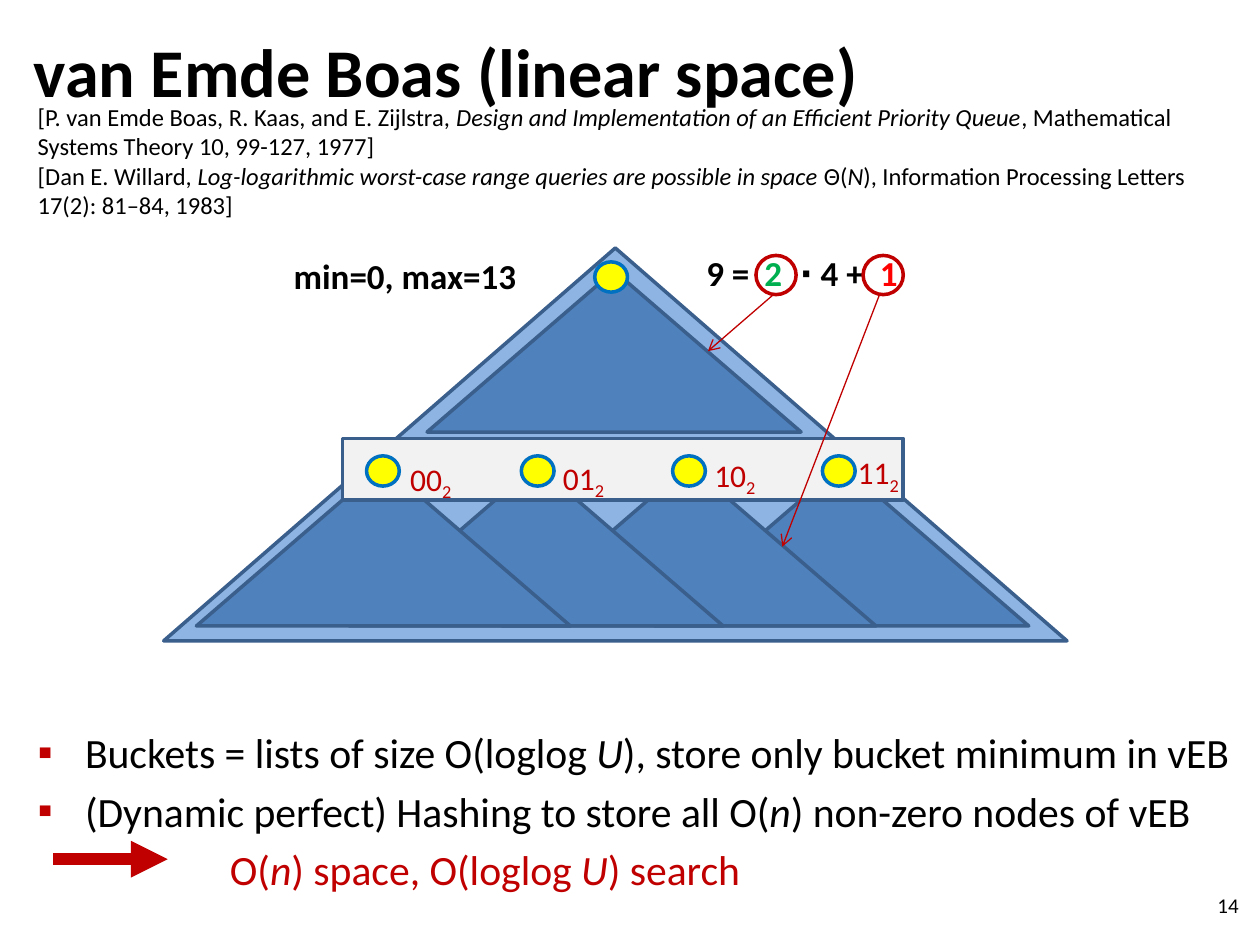
from lxml.etree import SubElement
from pptx import Presentation
from pptx.dml.color import RGBColor
from pptx.enum.shapes import MSO_CONNECTOR, MSO_SHAPE
from pptx.enum.text import MSO_ANCHOR, PP_ALIGN
from pptx.oxml.ns import qn
from pptx.util import Cm, Pt

FONT = "Calibri"
HUES = {
    "black": "000000", "red": "C00000", "bright": "FF0000", "green": "00B050",
    "pale": "8EB4E3", "blue": "4F81BD", "edge": "3A5F8C", "grey": "F2F2F2",
    "gold": "FFFF00", "rim": "0070C0",
}
ITAL = {"italic": True}


def hue(name):
    return RGBColor.from_string(HUES[name])


def write(frame, paras, size=14, bold=False, color="black", align=PP_ALIGN.LEFT,
          anchor=MSO_ANCHOR.TOP):
    """Fill a frame; each paragraph is a list of strings or (string, format) pairs."""
    frame.word_wrap = True
    frame.vertical_anchor = anchor
    for i, runs in enumerate(paras):
        para = frame.add_paragraph() if i else frame.paragraphs[0]
        para.alignment = align
        for item in runs:
            text, form = (item, {}) if isinstance(item, str) else item
            run = para.add_run()
            run.text = text
            font = run.font
            font.name, font.size, font.bold = FONT, Pt(size), bold
            font.italic = form.get("italic", False)
            font.color.rgb = hue(form.get("color", color))
            if "base" in form:
                run._r.get_or_add_rPr().set("baseline", str(form["base"] * 1000))
    return frame


def place(shape, x, y, w, h):
    shape.left, shape.top, shape.width, shape.height = Cm(x), Cm(y), Cm(w), Cm(h)


def label(slide, x, y, w, h, paras, **form):
    box = slide.shapes.add_textbox(Cm(x), Cm(y), Cm(w), Cm(h))
    return write(box.text_frame, paras, **form)


def draw(slide, kind, x, y, w, h, fill=None, line="edge"):
    shape = slide.shapes.add_shape(kind, Cm(x), Cm(y), Cm(w), Cm(h))
    shape.shadow.inherit = False
    if fill:
        shape.fill.solid()
        shape.fill.fore_color.rgb = hue(fill)
    else:
        shape.fill.background()
    shape.line.color.rgb = hue(line)
    shape.line.width = Pt(2)


def arrow(slide, x1, y1, x2, y2, width, head):
    line = slide.shapes.add_connector(
        MSO_CONNECTOR.STRAIGHT, Cm(x1), Cm(y1), Cm(x2), Cm(y2))
    line.line.color.rgb = hue("red")
    line.line.width = Pt(width)
    SubElement(line.line._get_or_add_ln(), qn("a:tailEnd"), type=head)
    SubElement(line._element.spPr, qn("a:effectLst"))


def indent(para, left, hang=0, mark=None):
    props = para._p.get_or_add_pPr()
    props.set("marL", str(Cm(left)))
    props.set("indent", str(-Cm(hang)))
    if mark:
        tint = SubElement(props, qn("a:buClr"))
        SubElement(tint, qn("a:srgbClr"), val=HUES["red"])
        SubElement(props, qn("a:buFont"), typeface="Wingdings")
        props[-1].set("typeface", FONT)
        SubElement(props, qn("a:buChar"), char=mark)
    else:
        SubElement(props, qn("a:buNone"))


def header(slide, x, y):
    title = slide.shapes.title
    place(title, x, y, 22.86, 2.16)
    write(title.text_frame, [["van Emde Boas (linear space)"]], size=39, bold=True,
          anchor=MSO_ANCHOR.MIDDLE)
    label(slide, x + 0.08, y + 1.6, 24.89, 3.99, [
        ["[P. van Emde Boas, R. Kaas, and E. Zijlstra, ",
         ("Design and Implementation of an Efficient Priority Queue", ITAL),
         ", Mathematical Systems Theory 10, 99-127, 1977]"],
        ["[Dan E. Willard, ",
         ("Log-logarithmic worst-case range queries are possible in space ", ITAL),
         "Θ(", ("N", ITAL),
         "), Information Processing Letters 17(2): 81–84, 1983]"],
    ])


def tree(slide, x, y):
    # Outer tree, top tree and bottom trees
    peak, disc = MSO_SHAPE.ISOSCELES_TRIANGLE, MSO_SHAPE.OVAL
    draw(slide, peak, x, y + 0.05, 18.21, 7.92, "pale")
    label(slide, x + 0.81, y + 0.05, 6.55, 1.12, [["min=0, max=13"]],
          size=20, bold=True, align=PP_ALIGN.RIGHT)
    spots = [(5.31, 0.51)] + [(0.66 + 3.08 * i, 4.42) for i in reversed(range(4))]
    for dx, dy in spots:
        draw(slide, peak, x + dx, y + dy, 7.54, 3.25, "blue")

    # Row of nodes with binary labels
    draw(slide, MSO_SHAPE.RECTANGLE, x + 3.61, y + 3.89, 11.3, 1.24, "grey")
    for dx, dy in [(4.09, 4.24), (7.21, 4.24), (10.26, 4.24), (13.28, 4.24),
                   (8.69, 0.33)]:
        draw(slide, disc, x + dx, y + dy, 0.66, 0.61, "gold", "rim")
    tags = [("00", 4.72, 4.19), ("01", 7.8, 4.17), ("10", 10.85, 4.11),
            ("11", 13.74, 4.06)]
    for bits, dx, dy in tags:
        label(slide, x + dx, y + dy, 2.4, 0.79, [[bits, ("2", {"base": -25})]],
              size=18, color="red")

    # Split of the key, with rings and arrows
    sum_text = label(slide, x + 10.69, y, 5.18, 1.12, [
        ["9 =\t", ("2", {"color": "green"}), "\t∙ 4 +\t", ("1", {"color": "bright"})],
    ], size=20, bold=True)
    stops = SubElement(sum_text.paragraphs[0]._p.get_or_add_pPr(), qn("a:tabLst"))
    for stop in (1.17, 1.88, 3.5):
        SubElement(stops, qn("a:tab"), pos=str(Cm(stop)), algn="l")
    for ring, x1, x2, y2 in [(11.94, 12.29, 10.97, 2.13), (14.1, 14.43, 12.47, 6.07)]:
        draw(slide, disc, x + ring, y + 0.2, 0.81, 0.79, line="red")
        arrow(slide, x + x1, y + 0.99, x + x2, y + y2, 0.75, "arrow")


def points(slide, x, y):
    body = slide.placeholders[1]
    place(body, x, y, 24.89, 4.09)
    red = {"color": "red"}
    frame = write(body.text_frame, [
        ["Buckets = lists of size O(loglog ", ("U", ITAL),
         "), store only bucket minimum in vEB"],
        ["(Dynamic perfect) Hashing to store all O(", ("n", ITAL),
         ") non-zero nodes of vEB"],
        [("O(", red), ("n", red | ITAL), (") space, O(loglog ", red),
         ("U", red | ITAL), (") search", red)],
    ], size=23.8)
    first, second, result = frame.paragraphs
    for para in (first, second):
        indent(para, 0.95, 0.95, "▪")
    indent(result, 3.87)
    arrow(slide, x + 0.56, y + 2.79, x + 2.87, y + 2.79, 7, "triangle")


def main():
    deck = Presentation()
    deck.slide_width, deck.slide_height = Cm(25.4), Cm(19.05)
    slide = deck.slides.add_slide(deck.slide_layouts[1])
    header(slide, 0.43, 0.33)
    tree(slide, 3.3, 4.95)
    points(slide, 0.51, 14.53)
    # Page number
    label(slide, 19.3, 17.73, 5.92, 1.02, [["14"]], size=12,
          align=PP_ALIGN.RIGHT, anchor=MSO_ANCHOR.MIDDLE)
    deck.save("out.pptx")


if __name__ == "__main__":
    main()
